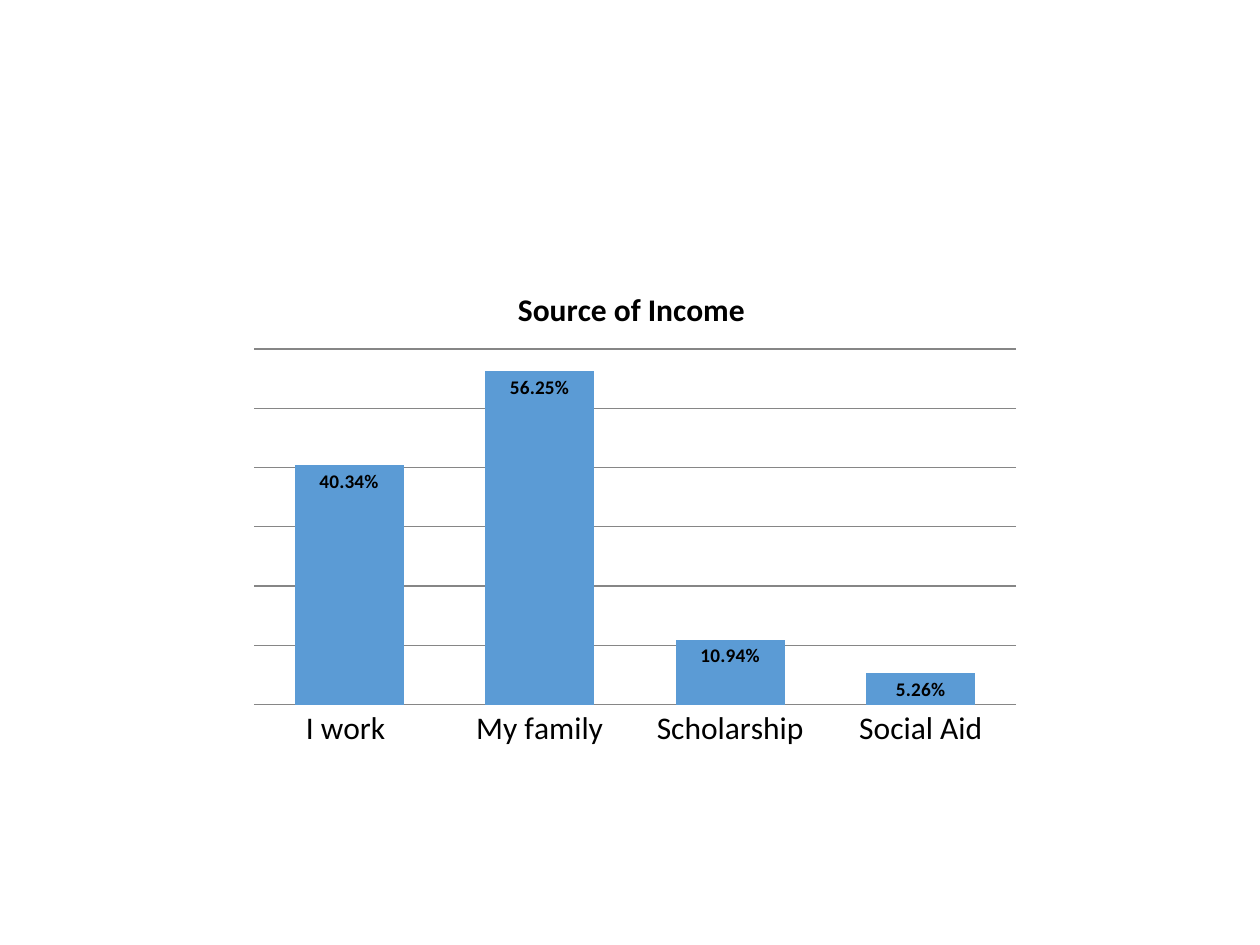
from lxml import etree
from pptx import Presentation
from pptx import util as u
from pptx.chart.data import CategoryChartData
from pptx.dml.color import RGBColor
from pptx.enum import chart as ch
from pptx.oxml.ns import qn

PX = u.Inches(1) // 126


def paint(font, size, bold):
    font.name = "Calibri"
    font.size = u.Pt(size)
    font.bold = bold
    font.color.rgb = RGBColor.from_string("000000")


prs = Presentation()
prs.slide_width, prs.slide_height = 1260 * PX, 945 * PX
slide = prs.slides.add_slide(prs.slide_layouts[6])

data = CategoryChartData(number_format="0.00%")
data.categories = ["I work ", "My family", "Scholarship", "Social Aid"]
data.add_series("Series 1", [0.4034, 0.5625, 0.1094, 0.0526])
frame = slide.shapes.add_chart(
    ch.XL_CHART_TYPE.COLUMN_CLUSTERED, 238 * PX, 265 * PX, 794 * PX, 494 * PX, data)
chart = frame.chart
paint(chart.font, 10, False)
chart.has_legend = False

chart.has_title = True
title = chart.chart_title.text_frame
title.text = "Source of Income "
paint(title.paragraphs[0].runs[0].font, 18, True)
chart.chart_title.include_in_layout = False

cat = chart.category_axis
cat.major_tick_mark = ch.XL_TICK_MARK.NONE
cat.format.line.color.rgb = RGBColor.from_string("868686")
cat.format.line.width = u.Pt(0.75)
paint(cat.tick_labels.font, 18, False)

val = chart.value_axis
val.visible = False
val.minimum_scale, val.maximum_scale, val.major_unit = 0, 0.6, 0.1
val.tick_labels.number_format = "0.00%"
val.tick_labels.number_format_is_linked = False
val.has_major_gridlines = True
val.major_gridlines.format.line.color.rgb = RGBColor.from_string("868686")
val.major_gridlines.format.line.width = u.Pt(0.75)

plot = chart.plots[0]
plot.gap_width, plot.overlap = 75, 40
plot.vary_by_categories = False
bars = plot.series[0]
bars.format.fill.solid()
bars.format.fill.fore_color.rgb = RGBColor.from_string("5B9BD5")
tags = bars.data_labels
tags.show_value = True
tags.position = ch.XL_LABEL_POSITION.INSIDE_END
tags.number_format = "0.00%"
tags.number_format_is_linked = False
paint(tags.font, 11, True)

area = chart.element.find(".//" + qn("c:plotArea"))
old = area.find(qn("c:layout"))
if old is not None:
    area.remove(old)
lay = etree.Element(qn("c:layout"))
area.insert(0, lay)
man = etree.SubElement(lay, qn("c:manualLayout"))
for tag, value in [("layoutTarget", "inner"), ("xMode", "edge"), ("yMode", "edge"),
                   ("x", "0.02"), ("y", "0.17"), ("w", "0.96"), ("h", "0.72")]:
    etree.SubElement(man, qn("c:" + tag)).set("val", value)

prs.save("out.pptx")
